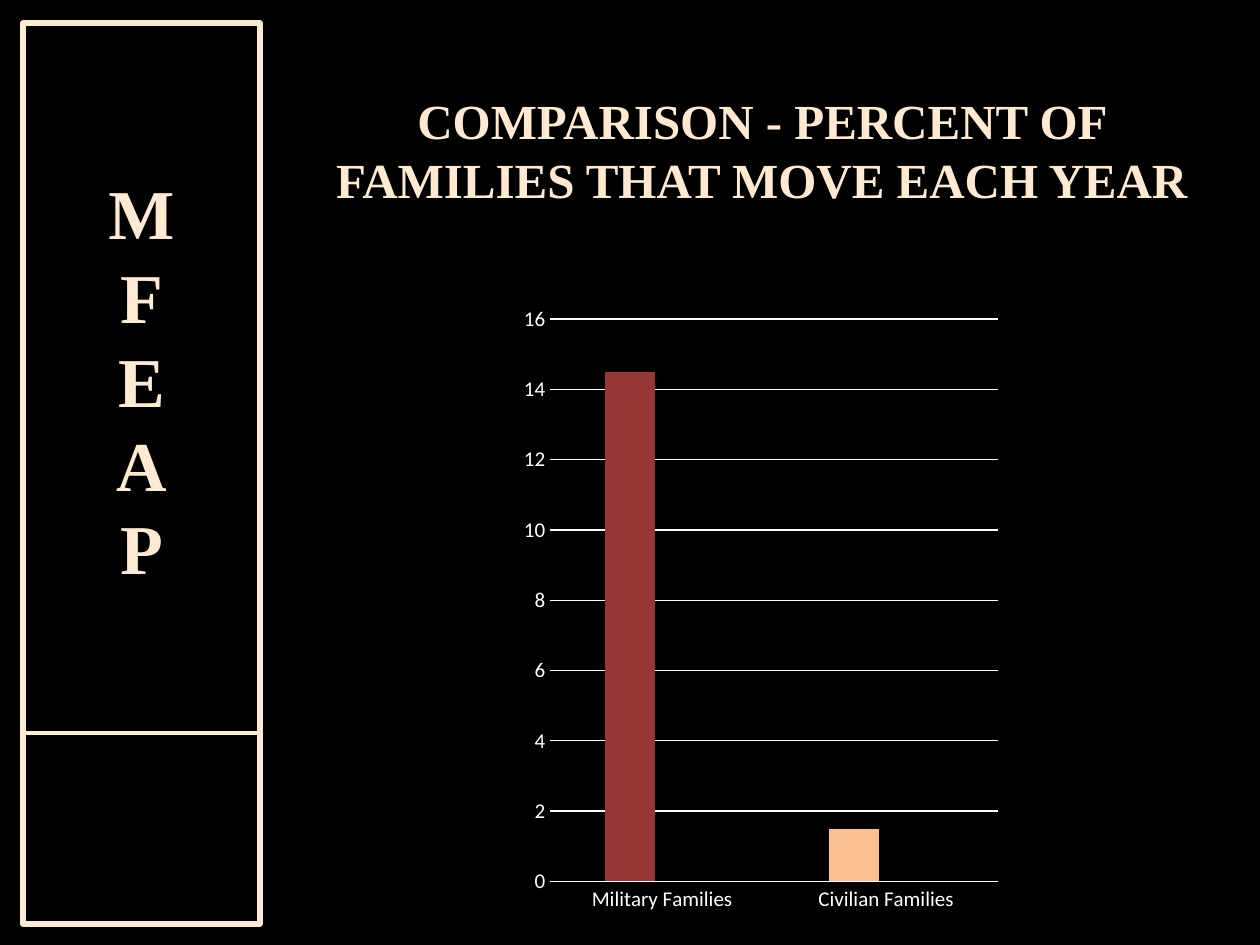
"""Build the slide comparing how often military and civilian families move."""
from dataclasses import dataclass
from typing import NamedTuple

from lxml.etree import SubElement
from pptx import Presentation
from pptx.chart.data import CategoryChartData
from pptx.dml.color import RGBColor
from pptx.enum.chart import XL_CHART_TYPE, XL_TICK_MARK
from pptx.enum.shapes import MSO_CONNECTOR, MSO_SHAPE
from pptx.enum.text import MSO_ANCHOR, MSO_AUTO_SIZE, PP_ALIGN
from pptx.oxml.ns import qn
from pptx.util import Emu, Pt


@dataclass(frozen=True)
class Theme:
    """Colours, fonts and type sizes of the slide."""
    background: str = "000000"
    cream: str = "FEEAD0"
    title: str = "FFEAD0"
    chart_text: str = "FFFFFF"
    military: str = "953735"
    civilian: str = "FAC090"
    second_series: str = "C0504D"
    serif: str = "Times New Roman"
    sans: str = "Calibri"
    title_size: int = 28
    banner_size: int = 40
    chart_size: int = 10
    axis_size: int = 12


class Frame(NamedTuple):
    """A rectangle in px."""
    left: int
    top: int
    width: int
    height: int


THEME = Theme()
PAGE = Frame(0, 0, 1260, 945)
BANNER = Frame(23, 23, 237, 901)
DIVIDER_TOP = 733
TITLE = Frame(284, 21, 955, 189)
CHART = Frame(514, 294, 494, 630)


def px(length: int) -> Emu:
    """Turn px into EMU at 126 px to the inch."""
    return Emu(round(length * 914400 / 126))


def place(frame: Frame) -> list[Emu]:
    """Give a frame in EMU."""
    return [px(length) for length in frame]


def style_font(font, family: str, size: int, color: str, bold: bool = False) -> None:
    """Set the face, size, colour and weight of a font."""
    font.name, font.size, font.bold = family, Pt(size), bold
    font.color.rgb = RGBColor.from_string(color)


def style_line(line, color: str, width: float) -> None:
    """Set the colour and width of a line."""
    line.color.rgb = RGBColor.from_string(color)
    line.width = Pt(width)


def fill_solid(fill, color: str) -> None:
    """Give a fill one colour."""
    fill.solid()
    fill.fore_color.rgb = RGBColor.from_string(color)


def add_banner(page) -> None:
    """Draw the framed vertical name with its divider."""
    top, right = px(DIVIDER_TOP), px(BANNER.left + BANNER.width)
    divider = page.shapes.add_connector(
        MSO_CONNECTOR.STRAIGHT, px(BANNER.left), top, right, top)
    style_line(divider.line, THEME.cream, 2.5)
    SubElement(divider._element.spPr, qn("a:effectLst"))

    box = page.shapes.add_shape(MSO_SHAPE.RECTANGLE, *place(BANNER))
    box.shadow.inherit = False
    box.fill.background()
    style_line(box.line, THEME.cream, 3)
    frame = box.text_frame
    frame.text = "MFEAP"
    frame.vertical_anchor = MSO_ANCHOR.MIDDLE
    frame.margin_left = frame.margin_right = px(13)
    frame.margin_top, frame.margin_bottom = px(0), px(189)
    frame._txBody.bodyPr.set("vert", "wordArtVert")
    para = frame.paragraphs[0]
    para.alignment = PP_ALIGN.CENTER
    style_font(para.runs[0].font, THEME.serif, THEME.banner_size, THEME.cream, True)


def add_title(page) -> None:
    """Fill the title placeholder, set against its bottom edge."""
    title = page.shapes.title
    title.left, title.top, title.width, title.height = place(TITLE)
    frame = title.text_frame
    frame.text = "COMPARISON - PERCENT OF FAMILIES THAT MOVE EACH YEAR"
    frame.auto_size = MSO_AUTO_SIZE.NONE
    frame.vertical_anchor = MSO_ANCHOR.BOTTOM
    frame.margin_bottom = px(2)
    para = frame.paragraphs[0]
    para.alignment = PP_ALIGN.CENTER
    style_font(para.runs[0].font, THEME.serif, THEME.title_size, THEME.title, True)


def add_moves_chart(page) -> None:
    """Draw the column chart of families that move."""
    data = CategoryChartData()
    data.categories = ["Military Families", "Civilian Families"]
    data.add_series("Series 1", [14.5, 1.5])
    data.add_series("Series 2", [None, None])
    chart = page.shapes.add_chart(
        XL_CHART_TYPE.COLUMN_CLUSTERED, *place(CHART), data).chart
    chart.has_legend = chart.has_title = False
    style_font(chart.font, THEME.sans, THEME.chart_size, THEME.chart_text)

    plot = chart.plots[0]
    plot.vary_by_categories = False
    plot.gap_width, plot.overlap = 219, -27
    for series, color in zip(plot.series, (THEME.military, THEME.second_series)):
        fill_solid(series.format.fill, color)
    fill_solid(plot.series[0].points[1].format.fill, THEME.civilian)

    for axis in (chart.category_axis, chart.value_axis):
        axis.major_tick_mark = axis.minor_tick_mark = XL_TICK_MARK.NONE
        style_font(axis.tick_labels.font, THEME.sans, THEME.axis_size, THEME.chart_text)
    style_line(chart.category_axis.format.line, THEME.chart_text, 0.75)
    values = chart.value_axis
    values.minimum_scale, values.maximum_scale, values.major_unit = 0, 16, 2
    values.format.line.fill.background()
    style_line(values.major_gridlines.format.line, THEME.chart_text, 0.75)


def main() -> None:
    """Build and save the deck."""
    deck = Presentation()
    deck.slide_width, deck.slide_height = px(PAGE.width), px(PAGE.height)
    page = deck.slides.add_slide(deck.slide_layouts[5])
    fill_solid(page.background.fill, THEME.background)
    add_banner(page)
    add_title(page)
    add_moves_chart(page)
    deck.save("out.pptx")


if __name__ == "__main__":
    main()
